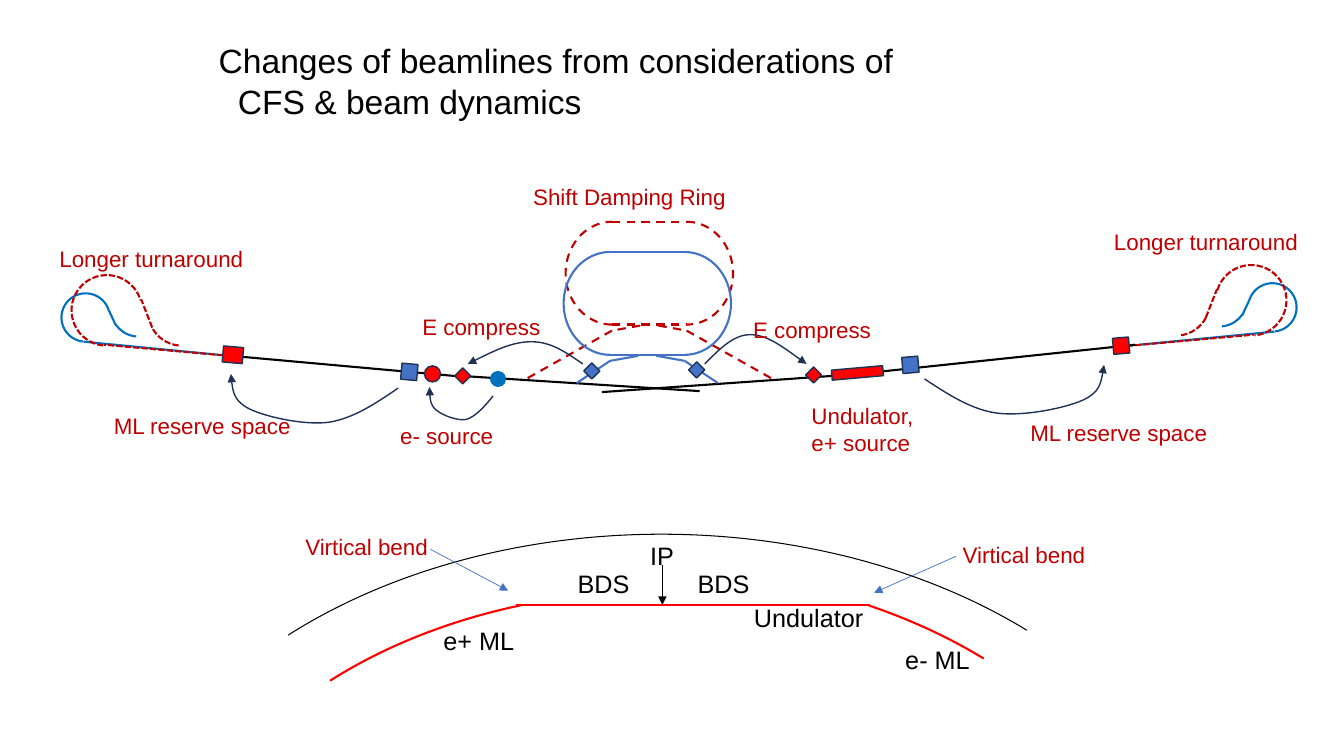
"""Build a slide on beamline changes from CFS and beam dynamics considerations."""
from lxml import etree
from pptx import Presentation
from pptx.dml.color import RGBColor
from pptx.enum.dml import MSO_LINE
from pptx.enum.shapes import MSO_CONNECTOR, MSO_SHAPE
from pptx.enum.text import MSO_AUTO_SIZE
from pptx.oxml.ns import qn
from pptx.util import Inches, Pt

BLACK = RGBColor(0x00, 0x00, 0x00)
RED = RGBColor(0xFF, 0x00, 0x00)
DARK_RED = RGBColor(0xC0, 0x00, 0x00)
BLUE = RGBColor(0x44, 0x72, 0xC4)
SKY = RGBColor(0x00, 0x70, 0xC0)
NAVY = RGBColor(0x1E, 0x32, 0x56)

STRAIGHT = MSO_CONNECTOR.STRAIGHT
ARC, RECT = MSO_SHAPE.ARC, MSO_SHAPE.RECTANGLE
OVAL, DIAMOND = MSO_SHAPE.OVAL, MSO_SHAPE.DIAMOND
DASH, SHORT_DASH = MSO_LINE.DASH, MSO_LINE.SQUARE_DOT
FIT = MSO_AUTO_SIZE.SHAPE_TO_FIT_TEXT

MIRROR_SUM = 13.47
MIRROR_DROP = 0.1
MARK = 0.16


def style_line(sp, color, width, dash=None, arrow=False):
    """Set the outline of a shape or connector."""
    sp.line.color.rgb = color
    sp.line.width = Pt(width)
    if dash is not None:
        sp.line.dash_style = dash
    if arrow:
        ln = sp.element.spPr.find(qn("a:ln"))
        etree.SubElement(ln, qn("a:tailEnd"), type="triangle")


def add_line(parent, start, end, color, width=1.5, dash=None, arrow=False):
    """Draw a straight line between two points."""
    sp = parent.shapes.add_connector(STRAIGHT, *(Inches(v) for v in (*start, *end)))
    style_line(sp, color, width, dash, arrow)
    etree.SubElement(sp.element.spPr, qn("a:effectLst"))


def add_arc(parent, box, angles, color, width=1.5, dash=None, rotation=0):
    """Draw an arc clockwise between two angles in degrees."""
    sp = parent.shapes.add_shape(ARC, *(Inches(v) for v in box))
    for i, angle in enumerate(angles):
        sp.adjustments[i] = angle * 0.6
    sp.rotation = rotation
    sp.shadow.inherit = False
    sp.fill.background()
    style_line(sp, color, width, dash)


def add_marker(parent, shape, x, y, color, w=MARK, h=MARK, rotation=0, outlined=True):
    """Draw a filled beamline element."""
    sp = parent.shapes.add_shape(shape, Inches(x), Inches(y), Inches(w), Inches(h))
    sp.rotation = rotation
    sp.shadow.inherit = False
    sp.fill.solid()
    sp.fill.fore_color.rgb = color
    if outlined:
        style_line(sp, NAVY, 1)
    else:
        sp.line.fill.background()


def add_text(parent, box, lines, size, color, second_indent=0):
    """Place unwrapped text, one paragraph per line."""
    tf = parent.shapes.add_textbox(*(Inches(v) for v in box)).text_frame
    tf.word_wrap = False
    tf.auto_size = FIT
    for i, line in enumerate(lines):
        p = tf.add_paragraph() if i else tf.paragraphs[0]
        p.text = line
        if i and second_indent:
            p._p.get_or_add_pPr().set("marL", str(Inches(second_indent)))
        p.font.name = "Arial"
        p.font.size = Pt(size)
        p.font.color.rgb = color


def add_move_arrow(parent, points):
    """Draw a curved arrow through joined cubic segments."""
    start, *controls = [(Inches(x), Inches(y)) for x, y in points]
    builder = parent.shapes.build_freeform(*start)
    builder.add_line_segments(controls, close=False)
    sp = builder.convert_to_shape()
    outline = next(sp.element.iter(qn("a:path")))
    steps = outline.findall(qn("a:lnTo"))
    for i in range(0, len(steps), 3):
        curve = etree.SubElement(outline, qn("a:cubicBezTo"))
        for step in steps[i:i + 3]:
            curve.append(step[0])
            outline.remove(step)
    sp.shadow.inherit = False
    sp.fill.background()
    style_line(sp, NAVY, 1, arrow=True)


def add_turnaround(parent, color, dash, arcs, lines, mirrored):
    """Draw a turnaround loop at the right end, or its mirror at the left."""
    for (x, y, w, h), (start, end) in arcs:
        if mirrored:
            x, y = MIRROR_SUM - x - w, y + MIRROR_DROP
            start, end = 180 - end, 180 - start
        angles = (start % 360, end % 360)
        add_arc(parent, (x, y, w, h), angles, color, dash=dash, rotation=5 if mirrored else 355)
    for line in lines:
        if mirrored:
            line = [(MIRROR_SUM - x, y + MIRROR_DROP) for x, y in line]
        add_line(parent, *line, color, dash=dash)


def add_damping_ring(parent, color, dash, cx, top, foot_dx, foot_y):
    """Draw a racetrack ring with its two transfer lines."""
    half, w, h = 0.37, 0.92, 1.02
    for side, angles in ((1, (270, 90)), (-1, (90, 270))):
        add_arc(parent, (cx + side * half - w / 2, top, w, h), angles, color, dash=dash)
        knee = (cx + side * half, top + 1.08)
        add_line(parent, (cx + side * 0.09, top + 1.03), knee, color, dash=dash)
        add_line(parent, knee, (cx + side * foot_dx, foot_y), color, dash=dash)
    for y in (top, top + h):
        add_line(parent, (cx - half, y), (cx + half, y), color, dash=dash)


def add_beamlines(slide):
    """Draw the plan view of the beamlines."""
    loop, tail = (201.73, 89.28), (32.79, 89.28)
    for mirrored in (False, True):
        end = slide.shapes.add_group_shape()
        add_turnaround(end, SKY, None,
                       [((12.38, 2.81, 0.48, 0.48), loop), ((11.83, 2.76, 0.53, 0.48), tail)],
                       [((12.32, 3.13), (12.39, 2.98)), ((11.3, 3.42), (12.64, 3.29))], mirrored)
        add_turnaround(end, DARK_RED, SHORT_DASH,
                       [((12.06, 2.63, 0.7, 0.7), loop), ((11.33, 2.66, 0.67, 0.67), tail)],
                       [((11.96, 3.15), (12.07, 2.87)), ((11.09, 3.44), (12.44, 3.32))], mirrored)
    center = slide.shapes.add_group_shape()
    add_damping_ring(center, DARK_RED, DASH, 6.44, 2.2, 1.24, 3.77)
    for start, end in (((4.58, 3.73), (6.94, 3.88)), ((5.97, 3.89), (8.39, 3.72)),
                       ((8.51, 3.71), (11.26, 3.42)), ((4.62, 3.74), (2.4, 3.54))):
        add_line(center, start, end, BLACK)
    add_damping_ring(center, BLUE, None, 6.42, 2.5, 0.7, 3.8)


def add_profile(slide):
    """Draw the vertical profile around the interaction point."""
    profile = slide.shapes.add_group_shape()
    add_arc(profile, (1.05, 5.3, 11.02, 7.72), (217.67, 321.26), BLACK, 0.75)
    add_line(profile, (6.57, 5.61), (6.57, 6), BLACK, 0.75, arrow=True)
    add_arc(profile, (1.66, 5.86, 9.84, 6.89), (217.67, 246.79), RED)
    add_arc(profile, (1.27, 5.65, 10.24, 7.17), (304.6, 321.26), RED)
    add_line(profile, (5.12, 6), (8.63, 6), RED)
    for text, x, y, w in (("IP", 6.35, 5.31, 0.44), ("e- ML", 8.88, 6.34, 0.85),
                          ("e+ ML", 4.3, 6.15, 0.97), ("Undulator", 7.38, 5.93, 1.3),
                          ("BDS", 6.82, 5.59, 0.72), ("BDS", 5.63, 5.59, 0.72)):
        add_text(profile, (x, y, w, 0.4), [text], 18, BLACK)


def add_markers(slide):
    """Place the beamline elements."""
    add_marker(slide, RECT, 3.98, 3.61, BLUE, rotation=5)
    add_marker(slide, RECT, 2.21, 3.44, RED, w=0.2, rotation=5)
    add_marker(slide, RECT, 8.95, 3.54, BLUE, rotation=355)
    add_marker(slide, RECT, 11.04, 3.35, RED, rotation=355)
    add_marker(slide, OVAL, 4.86, 3.68, SKY, outlined=False)
    add_marker(slide, OVAL, 4.21, 3.63, RED)
    add_marker(slide, RECT, 8.25, 3.65, RED, w=0.51, h=0.1, rotation=355)
    for x, y, color in ((5.79, 3.6, BLUE), (6.83, 3.59, BLUE), (4.51, 3.65, RED), (7.99, 3.64, RED)):
        add_marker(slide, DIAMOND, x, y, color)


def main():
    """Build and save the slide."""
    prs = Presentation()
    prs.slide_width, prs.slide_height = Inches(13.33), Inches(7.5)
    slide = prs.slides.add_slide(prs.slide_layouts[6])
    add_beamlines(slide)
    add_profile(slide)
    add_markers(slide)
    for start, end in (((4.27, 5.45), (5.04, 5.86)), ((9.48, 5.52), (8.67, 5.88))):
        add_line(slide, start, end, BLUE, 0.5, arrow=True)
    for points in (
        [(3.95, 3.85), (3.73, 4), (3.51, 4.15), (3.26, 4.19), (3.02, 4.22), (2.65, 4.14),
         (2.48, 4.06), (2.32, 3.98), (2.3, 3.84), (2.29, 3.71)],
        [(9.17, 3.76), (9.4, 3.91), (9.64, 4.07), (9.9, 4.1), (10.16, 4.13), (10.56, 4.05),
         (10.74, 3.97), (10.91, 3.89), (10.93, 3.75), (10.95, 3.62)],
        [(4.89, 3.93), (4.81, 4.03), (4.72, 4.13), (4.63, 4.16), (4.54, 4.18), (4.39, 4.12),
         (4.33, 4.07), (4.27, 4.02), (4.26, 3.93), (4.26, 3.84)],
        [(5.78, 3.61), (5.62, 3.5), (5.47, 3.39), (5.27, 3.39), (5.08, 3.39), (4.86, 3.5), (4.64, 3.61)],
        [(6.99, 3.61), (7.13, 3.47), (7.27, 3.32), (7.44, 3.32), (7.61, 3.32), (7.8, 3.47), (8, 3.61)],
    ):
        add_move_arrow(slide, points)
    for text, x, y, w in (("Virtical bend", 2.93, 5.24, 1.43), ("Virtical bend", 9.45, 5.32, 1.43),
                          ("Longer turnaround", 0.49, 2.38, 2.05), ("Longer turnaround", 10.95, 2.21, 2.05),
                          ("Shift Damping Ring", 5.19, 1.77, 2.13), ("ML reserve space", 1.03, 4.04, 1.98),
                          ("ML reserve space", 10.12, 4.11, 1.98), ("e- source", 3.87, 4.14, 1.14),
                          ("E compress", 4.09, 3.06, 1.39), ("E compress", 7.37, 3.09, 1.39)):
        add_text(slide, (x, y, w, 0.37), [text], 16, DARK_RED)
    add_text(slide, (7.95, 3.94, 1.22, 0.64), ["Undulator,", "e+ source"], 16, DARK_RED)
    add_text(slide, (2.07, 0.35, 7.05, 0.91),
             ["Changes of beamlines from considerations of", "CFS & beam dynamics"], 24, BLACK, 0.19)
    prs.save("out.pptx")


if __name__ == "__main__":
    main()
